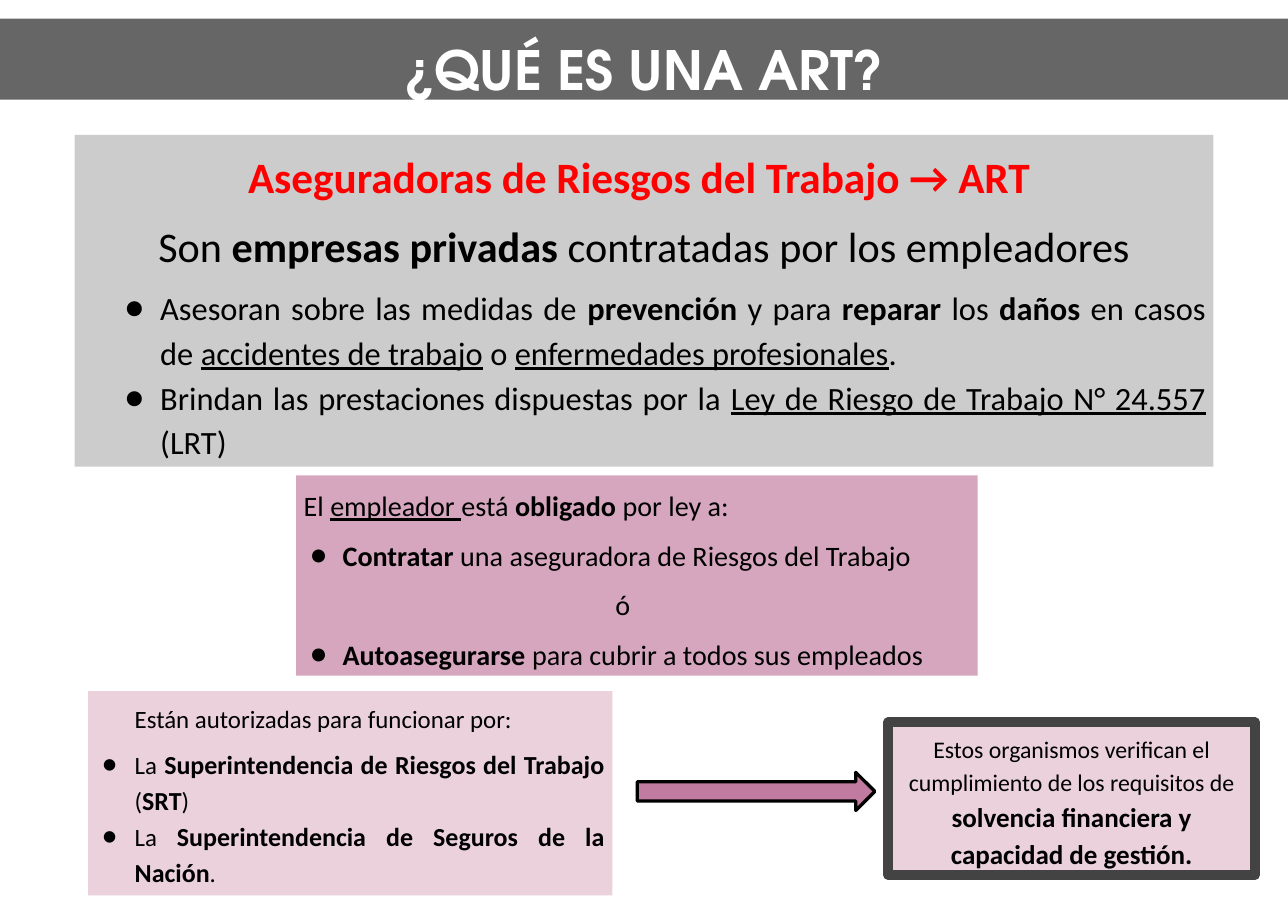
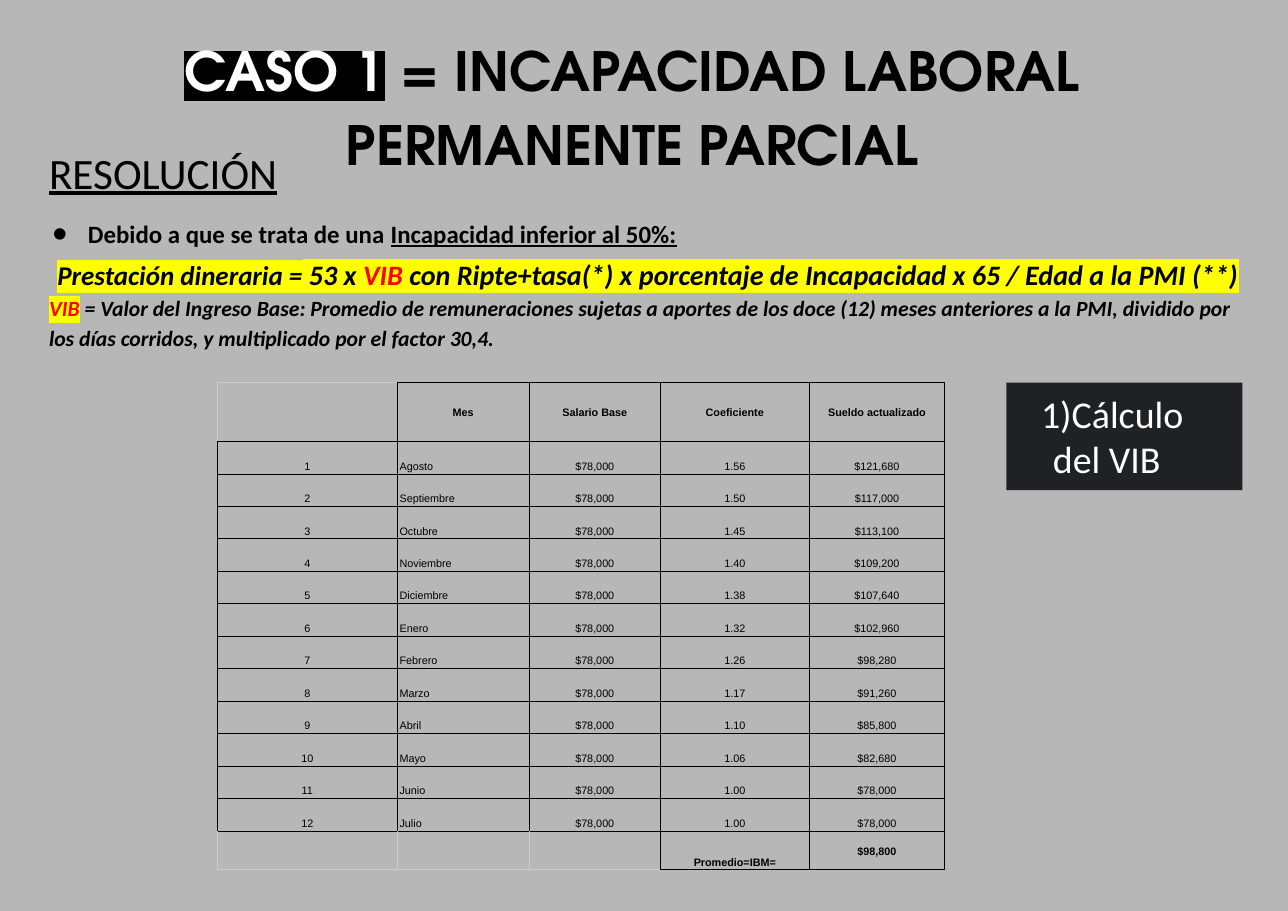
import pptx
import pptx.dml.color
import pptx.enum.shapes
import pptx.enum.text
import pptx.oxml
import pptx.oxml.ns
import pptx.util
from lxml import etree

Pt = pptx.util.Pt
Align = pptx.enum.text.PP_ALIGN
Anchor = pptx.enum.text.MSO_ANCHOR
Shapes = pptx.enum.shapes.MSO_SHAPE


class Theme:
    page_width, page_height = 1190.5, 841.89
    title_font, body_font, table_font = "TeX Gyre Adventor", "Calibri", "Arial"
    black, white, red, yellow = "000000", "FFFFFF", "FF0000", "FFFF00"
    band, panel, page_grey, faint, dark, frame = (
        "666666", "CCCCCC", "B7B7B7", "CCCCCC", "202124", "434343")
    pink, pale_pink, arrow = "D5A6BD", "EAD1DC", "C27BA0"
    title_size, heading_size, lead_size, list_size = 50, 40, 39, 30
    duty_size, authority_size, check_size = 26, 23, 22
    formula_size, note_size, step_size, table_size = 26, 20, 35, 10
    spacing, inset, border = 1.15, 7.2, 0.83


def write_para(para, runs, size, font=Theme.body_font, color=Theme.black, align=Align.JUSTIFY,
               left=0, first=0, before=0, bullet=None, spacing=Theme.spacing):
    """Each run is (text, flags[, overrides]); flags hold b, i, u; bullet is a character or "1)"."""
    para.alignment = align
    para.line_spacing = spacing
    para.space_before = Pt(before)
    props = para._p.get_or_add_pPr()
    props.set("marL", str(Pt(left)))
    props.set("indent", str(Pt(first)))
    if bullet:
        tint = etree.SubElement(props, pptx.oxml.ns.qn("a:buClr"))
        etree.SubElement(tint, pptx.oxml.ns.qn("a:srgbClr"), val=color)
        etree.SubElement(props, pptx.oxml.ns.qn("a:buFont"), typeface=font)
        if bullet == "1)":
            etree.SubElement(props, pptx.oxml.ns.qn("a:buAutoNum"), type="arabicParenR")
        else:
            etree.SubElement(props, pptx.oxml.ns.qn("a:buChar"), char=bullet)
    for text, flags, *overrides in runs:
        look = overrides[0] if overrides else {}
        span = para.add_run()
        span.text = text
        span.font.name = font
        span.font.size = Pt(look.get("size", size))
        span.font.bold = "b" in flags
        span.font.italic = "i" in flags
        span.font.underline = "u" in flags
        span.font.color.rgb = pptx.dml.color.RGBColor.from_string(look.get("color", color))
        if "mark" in look:
            mark = etree.Element(pptx.oxml.ns.qn("a:highlight"))
            etree.SubElement(mark, pptx.oxml.ns.qn("a:srgbClr"), val=look["mark"])
            span._r.rPr.find(pptx.oxml.ns.qn("a:solidFill")).addnext(mark)


def format_box(box, area, paragraphs=(), fill=None, line=None, weight=0):
    """Place and colour a shape, text box or title, then write its (runs, options) paragraphs."""
    box.left, box.top, box.width, box.height = (Pt(length) for length in area)
    box.shadow.inherit = False
    if fill:
        box.fill.solid()
        box.fill.fore_color.rgb = pptx.dml.color.RGBColor.from_string(fill)
    else:
        box.fill.background()
    if line:
        box.line.color.rgb = pptx.dml.color.RGBColor.from_string(line)
        box.line.width = Pt(weight)
    else:
        box.line.fill.background()
    frame = box.text_frame
    frame.word_wrap = True
    frame.auto_size = pptx.enum.text.MSO_AUTO_SIZE.NONE
    frame.vertical_anchor = Anchor.TOP
    frame.margin_left = frame.margin_right = Pt(Theme.inset)
    frame.margin_top = frame.margin_bottom = Pt(Theme.inset)
    for index, (runs, options) in enumerate(paragraphs):
        para = frame.add_paragraph() if index else frame.paragraphs[0]
        write_para(para, runs, **options)


deck = pptx.Presentation()
deck.slide_width, deck.slide_height = Pt(Theme.page_width), Pt(Theme.page_height)
title_only = deck.slide_layouts[5]
title_style = dict(size=Theme.title_size, font=Theme.title_font, align=Align.CENTER)

# Slide 1: what an ART is
page = deck.slides.add_slide(title_only)
page.background.fill.solid()
page.background.fill.fore_color.rgb = pptx.dml.color.RGBColor.from_string(Theme.white)
format_box(page.shapes.title, (0, 17.3, Theme.page_width, 74.9),
           [([("¿QUÉ ES UNA ART?", "b", {"color": Theme.white})], title_style)], Theme.band)

wide_bullet = dict(size=Theme.list_size, left=72, first=-33, bullet="●")
duty_bullet = dict(size=Theme.duty_size, left=36, first=-30, before=10, bullet="●")
authority_bullet = dict(size=Theme.authority_size, left=36, first=-30, bullet="●")
strong = {"size": 24}

definition = [
    ([("Aseguradoras de Riesgos del Trabajo → ART ", "b")],
     dict(size=Theme.heading_size, color=Theme.red, align=Align.CENTER, before=10)),
    ([("Son ", ""), ("empresas privadas ", "b"), ("contratadas por los empleadores", "")],
     dict(size=Theme.lead_size, align=Align.CENTER, before=10)),
    ([("Asesoran sobre las medidas de ", ""), ("prevención ", "b"), ("y para ", ""),
      ("reparar", "b"), (" los ", ""), ("daños", "b"), (" en casos de ", ""),
      ("accidentes de trabajo", "u"), (" o ", ""), ("enfermedades profesionales", "u"),
      (".", "")], dict(wide_bullet, before=10)),
    ([("Brindan las prestaciones dispuestas por la ", ""),
      ("Ley de Riesgo de Trabajo N° 24.557", "u"), (" (LRT)", "")], wide_bullet),
]
duties = [
    ([("El ", ""), ("empleador ", "u"), ("está ", ""), ("obligado ", "b"), ("por ley a:", "")],
     dict(size=Theme.duty_size, before=10)),
    ([("Contratar ", "b"), ("una aseguradora de Riesgos del Trabajo", "")], duty_bullet),
    ([("ó", "")], dict(size=Theme.duty_size, left=252, first=36, before=10)),
    ([("Autoasegurarse ", "b"), ("para cubrir a todos sus empleados", "")], duty_bullet),
]
authorities = [
    ([("Están autorizadas para funcionar por:", "")],
     dict(size=Theme.authority_size, first=36, before=10)),
    ([("La ", ""), ("Superintendencia de Riesgos del Trabajo", "b", strong), (" (", ""),
      ("SRT", "b", strong), (")", "")], dict(authority_bullet, before=10)),
    ([("La ", ""), ("Superintendencia de Seguros de la Nación", "b", strong), (".", "")],
     authority_bullet),
]
checks = [
    ([("Estos organismos verifican el cumplimiento de los requisitos de ", ""),
      ("solvencia financiera y capacidad de gestión.", "b", {"size": 25})],
     dict(size=Theme.check_size, align=Align.CENTER, before=10)),
]
for kind, area, paragraphs, fill, line, weight in (
    (Shapes.RECTANGLE, (69, 124.6, 1052.6, 306.7), definition, Theme.panel, None, 0),
    (Shapes.RECTANGLE, (273.6, 439.4, 630, 185), duties, Theme.pink, None, 0),
    (Shapes.RECTANGLE, (81.4, 638.8, 484.6, 188.6), authorities, Theme.pale_pink, None, 0),
    (Shapes.RIGHT_ARROW, (589, 713.7, 219.6, 35.3), [], Theme.arrow, Theme.black, 3),
    (Shapes.RECTANGLE, (820.9, 667.6, 339.1, 141.1), checks, Theme.pale_pink, Theme.frame, 9),
):
    box = page.shapes.add_shape(kind, 0, 0, 0, 0)
    format_box(box, area, paragraphs, fill, line, weight)

# Slide 2: worked case
page = deck.slides.add_slide(title_only)
page.background.fill.solid()
page.background.fill.fore_color.rgb = pptx.dml.color.RGBColor.from_string(Theme.page_grey)
format_box(page.shapes.title, (20.2, 18, 1128.2, 144.7),
           [([("CASO 1", "b", {"color": Theme.white, "mark": Theme.black}),
              (" = INCAPACIDAD LABORAL PERMANENTE PARCIAL", "b")], title_style)])

marked = {"mark": Theme.yellow}
marked_red = {"mark": Theme.yellow, "color": Theme.red}
resolution = [
    ([("RESOLUCIÓN", "u")], dict(size=Theme.heading_size, align=Align.LEFT)),
    ([("Debido a que se trata de una ", "b"), ("Incapacidad inferior al 50%:", "bu")],
     dict(authority_bullet, first=-33, before=15)),
    ([("Prestación dineraria =", "bi", dict(marked, size=25)), (" 53 x ", "bi", marked),
      ("VIB ", "bi", marked_red),
      ("con Ripte+tasa(*) x porcentaje de Incapacidad x 65 / Edad a la PMI (**)", "bi", marked)],
     dict(size=Theme.formula_size, align=Align.CENTER, before=4)),
    ([("VIB", "bi", marked_red),
      (" = Valor del Ingreso Base: Promedio de remuneraciones sujetas a aportes de los doce (12) "
       "meses anteriores a la PMI, dividido por los días corridos, y multiplicado por el factor "
       "30,4.", "bi")], dict(size=Theme.note_size, align=Align.LEFT)),
]
format_box(page.shapes.add_textbox(0, 0, 0, 0), (38.2, 120.4, 1121.8, 264.2), resolution)

months = [
    ("Agosto", "1.56", "$121,680"), ("Septiembre", "1.50", "$117,000"),
    ("Octubre", "1.45", "$113,100"), ("Noviembre", "1.40", "$109,200"),
    ("Diciembre", "1.38", "$107,640"), ("Enero", "1.32", "$102,960"),
    ("Febrero", "1.26", "$98,280"), ("Marzo", "1.17", "$91,260"),
    ("Abril", "1.10", "$85,800"), ("Mayo", "1.06", "$82,680"),
    ("Junio", "1.00", "$78,000"), ("Julio", "1.00", "$78,000"),
]
rows = [("", "Mes", "Salario Base", "Coeficiente", "Sueldo actualizado")]
rows += [(str(number), month, "$78,000", factor, salary)
         for number, (month, factor, salary) in enumerate(months, 1)]
rows.append(("", "", "", "Promedio=IBM=", "$98,800"))
last = len(rows) - 1
widths = [166.3, 121.7, 121.7, 137.2, 125.6]
heights = [54.5] + [30] * len(months) + [36]
faint_edges = {(0, 0): "LT", (last, 0): "LRB", (last, 1): "LRB", (last, 2): "LB"}

table = page.shapes.add_table(len(rows), len(widths), Pt(200.9), Pt(353.5),
                              Pt(sum(widths)), Pt(sum(heights))).table
table.first_row = table.horz_banding = False
for column, width in zip(table.columns, widths):
    column.width = Pt(width)
for row_index, (texts, height) in enumerate(zip(rows, heights)):
    table.rows[row_index].height = Pt(height)
    for column_index, text in enumerate(texts):
        cell = table.cell(row_index, column_index)
        cell.margin_left = cell.margin_right = Pt(2.2)
        cell.margin_top = cell.margin_bottom = Pt(1.4)
        is_edge_row = row_index in (0, last)
        is_middle = row_index == 0 or (row_index, column_index) == (last, 4)
        cell.vertical_anchor = Anchor.MIDDLE if is_middle else Anchor.BOTTOM
        if text:
            is_month = column_index == 1 and not is_edge_row
            write_para(cell.text_frame.paragraphs[0], [(text, "b" if is_edge_row else "")],
                       size=Theme.table_size, font=Theme.table_font,
                       align=Align.LEFT if is_month else Align.CENTER)
        cell_props = cell._tc.get_or_add_tcPr()
        for side in "LRTB":
            faint = side in faint_edges.get((row_index, column_index), "")
            edge = etree.SubElement(cell_props, pptx.oxml.ns.qn("a:ln" + side),
                                    w=str(Pt(Theme.border)))
            paint = etree.SubElement(edge, pptx.oxml.ns.qn("a:solidFill"))
            etree.SubElement(paint, pptx.oxml.ns.qn("a:srgbClr"),
                             val=Theme.faint if faint else Theme.black)
        cell.fill.background()

step = [([("Cálculo del VIB", "")],
         dict(size=Theme.step_size, color=Theme.white, align=Align.LEFT, left=36, first=-11,
              bullet="1)", spacing=1.0))]
box = page.shapes.add_shape(Shapes.RECTANGLE, 0, 0, 0, 0)
format_box(box, (930.2, 353.5, 218.2, 99.4), step, Theme.dark)

deck.save("out.pptx")
